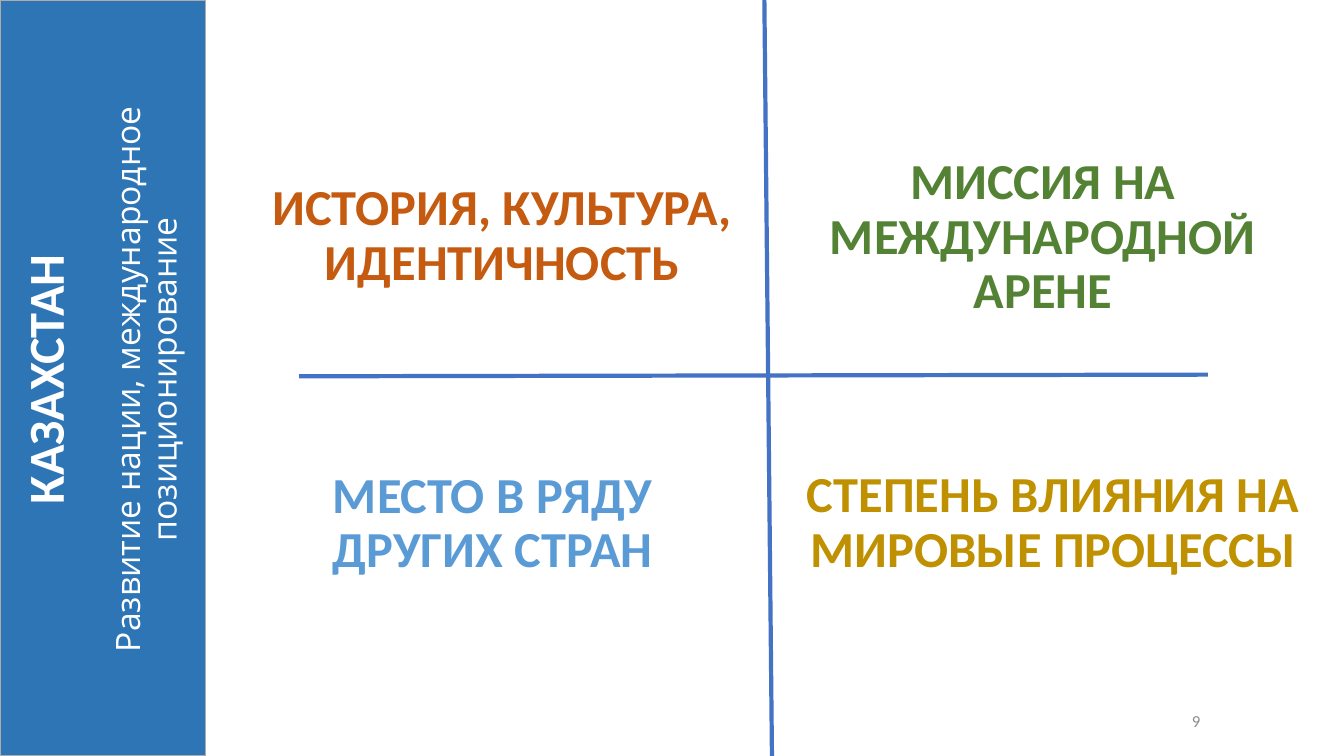
from dataclasses import dataclass

from lxml import etree
from pptx import Presentation
from pptx.dml.color import RGBColor
from pptx.enum.shapes import MSO_CONNECTOR, MSO_SHAPE
from pptx.enum.text import MSO_ANCHOR, MSO_AUTO_SIZE, PP_ALIGN
from pptx.oxml.ns import qn
from pptx.util import Inches, Pt

RECTANGLE = MSO_SHAPE.RECTANGLE
STRAIGHT = MSO_CONNECTOR.STRAIGHT
CENTER, RIGHT = PP_ALIGN.CENTER, PP_ALIGN.RIGHT
TOP, MIDDLE = MSO_ANCHOR.TOP, MSO_ANCHOR.MIDDLE
NO_AUTOFIT = MSO_AUTO_SIZE.NONE

WHITE = RGBColor(0xFF, 0xFF, 0xFF)
GRAY = RGBColor(0x8C, 0x8C, 0x8C)
BAND_BLUE = RGBColor(0x2E, 0x75, 0xB6)
BAND_EDGE = RGBColor(0xAF, 0xAB, 0xAB)
AXIS_BLUE = RGBColor(0x44, 0x72, 0xC4)
GREEN = RGBColor(0x54, 0x82, 0x35)
GOLD = RGBColor(0xBF, 0x90, 0x00)
LIGHT_BLUE = RGBColor(0x5B, 0x9B, 0xD5)
ORANGE = RGBColor(0xC5, 0x5A, 0x11)

# The page is a grid of 16 columns and 9 rows
COLUMNS, ROWS = 16, 9
SLIDE_WIDTH, SLIDE_HEIGHT = Inches(13.33), Inches(7.5)


@dataclass
class Area:
    left: float
    top: float
    width: float
    height: float


@dataclass
class Label:
    text: str
    area: Area
    color: RGBColor
    size: int = 36
    bold: bool = True
    align: PP_ALIGN = CENTER
    anchor: MSO_ANCHOR = TOP
    spacing: float = 0.9


@dataclass
class Axis:
    start: tuple[float, float]
    end: tuple[float, float]


LABELS = [
    Label("9", Area(10.81, 8.34, 3.6, 0.48), GRAY, 12, False, RIGHT, MIDDLE, 1.0),
    Label("МИССИЯ НА МЕЖДУНАРОДНОЙ АРЕНЕ", Area(8.96, 1.8, 6.91, 2.06), GREEN),
    Label("СТЕПЕНЬ ВЛИЯНИЯ НА МИРОВЫЕ ПРОЦЕССЫ", Area(9.32, 5.53, 6.44, 1.58), GOLD),
    Label("МЕСТО В РЯДУ ДРУГИХ СТРАН", Area(2.93, 5.53, 5.87, 1.72), LIGHT_BLUE),
    Label("ИСТОРИЯ, КУЛЬТУРА, ИДЕНТИЧНОСТЬ", Area(2.98, 2.11, 6, 1.31), ORANGE),
]
AXES = [Axis((9.1, 0), (9.19, ROWS)), Axis((3.56, 4.48), (14.38, 4.46))]
BAND_AREA = Area(0, 0, 2.45, ROWS)
TITLE_AREA = Area(-3.17, 3.28, 8.77, 2.47)


def across(columns: float) -> int:
    return round(SLIDE_WIDTH * columns / COLUMNS)


def down(rows: float) -> int:
    return round(SLIDE_HEIGHT * rows / ROWS)


def place(area: Area) -> tuple[int, int, int, int]:
    return across(area.left), down(area.top), across(area.width), down(area.height)


def style(para, name: str, size: int, bold: bool, color: RGBColor,
          align: PP_ALIGN = CENTER, spacing: float = 0.9) -> None:
    para.alignment = align
    para.line_spacing = spacing
    para.space_before = Pt(0)
    for span in para.runs:
        span.font.name = name
        span.font.size = Pt(size)
        span.font.bold = bold
        span.font.color.rgb = color


def add_label(page, label: Label) -> None:
    frame = page.shapes.add_textbox(*place(label.area)).text_frame
    frame.word_wrap = True
    frame.vertical_anchor = label.anchor
    frame.text = label.text
    style(frame.paragraphs[0], "Calibri", label.size, label.bold, label.color,
          label.align, label.spacing)


def add_axis(page, axis: Axis) -> None:
    line = page.shapes.add_connector(
        STRAIGHT, across(axis.start[0]), down(axis.start[1]),
        across(axis.end[0]), down(axis.end[1]))
    line.line.color.rgb = AXIS_BLUE
    line.line.width = Pt(3)
    etree.SubElement(line.element.spPr, qn("a:effectLst"))


def add_band(page) -> None:
    band = page.shapes.add_shape(RECTANGLE, *place(BAND_AREA))
    band.shadow.inherit = False
    band.fill.solid()
    band.fill.fore_color.rgb = BAND_BLUE
    band.line.color.rgb = BAND_EDGE
    band.line.width = Pt(1)


def set_title(page) -> None:
    title = page.shapes.title
    title.left, title.top, title.width, title.height = place(TITLE_AREA)
    title.rotation = 270
    frame = title.text_frame
    frame.word_wrap = True
    frame.auto_size = NO_AUTOFIT
    frame.vertical_anchor = MIDDLE
    frame.text = "КАЗАХСТАН\nРазвитие нации, международное позиционирование"
    country, topic = frame.paragraphs
    style(country, "Calibri", 36, True, WHITE)
    style(topic, "Open Sans", 24, False, WHITE)
    topic.space_before = Pt(26)
    # Bring the title in front of the band
    title.element.getparent().append(title.element)


def main() -> None:
    deck = Presentation()
    deck.slide_width, deck.slide_height = SLIDE_WIDTH, SLIDE_HEIGHT
    page = deck.slides.add_slide(deck.slide_layouts.get_by_name("Title Only"))

    # Quadrant labels and page number
    for label in LABELS:
        add_label(page, label)

    # Crossing axes
    for axis in AXES:
        add_axis(page, axis)

    # Side band with the turned title
    add_band(page)
    set_title(page)

    deck.save("out.pptx")


if __name__ == "__main__":
    main()
